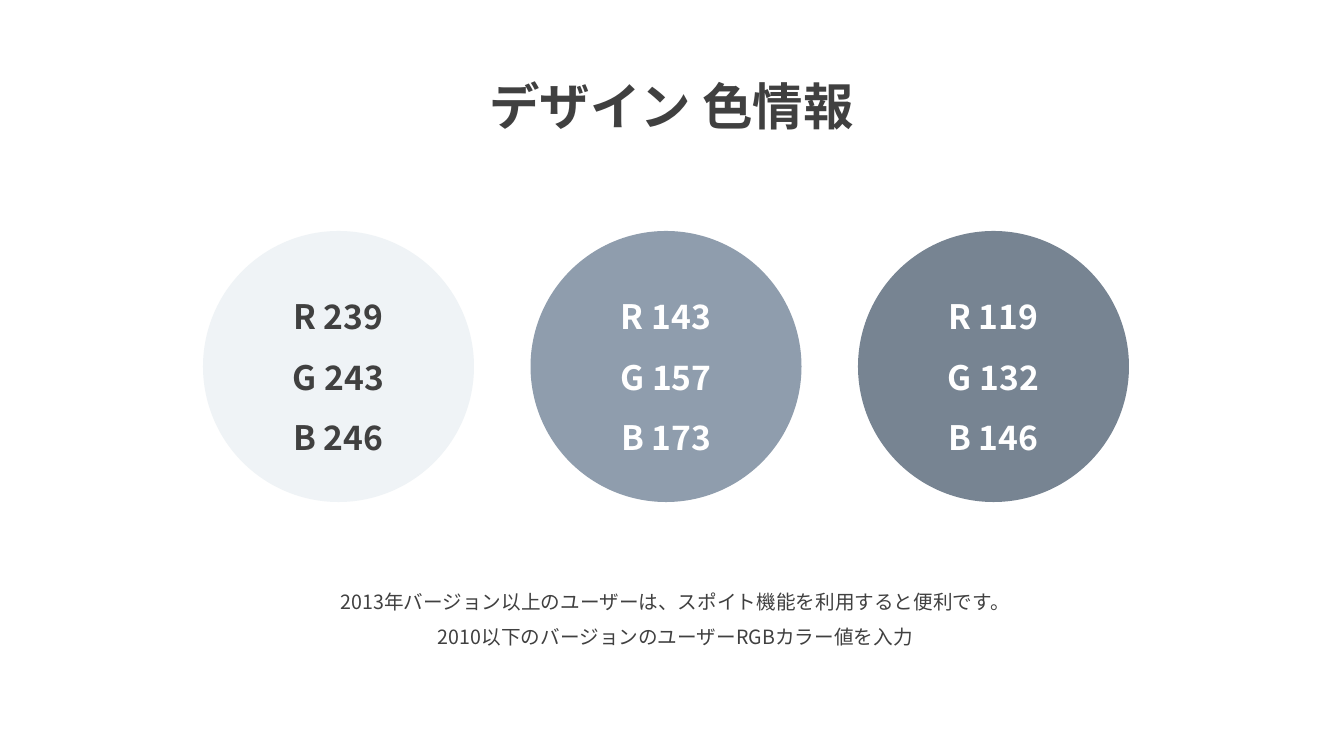
from dataclasses import dataclass

from lxml.etree import SubElement
from pptx import Presentation
from pptx.dml.color import RGBColor
from pptx.enum.shapes import MSO_SHAPE
from pptx.enum.text import MSO_ANCHOR, MSO_AUTO_SIZE, PP_ALIGN
from pptx.oxml.ns import qn
from pptx.util import Pt

EMU_PER_PX = 914400 / 100.8


@dataclass(frozen=True)
class Theme:
    font: str = "Noto Sans CJK KR"
    dark: RGBColor = RGBColor(64, 64, 64)
    light: RGBColor = RGBColor(255, 255, 255)
    title_size: int = 36
    value_size: int = 24
    note_size: int = 14
    line_spacing: float = 1.5
    swatches: tuple = ((239, 243, 246), (143, 157, 173), (119, 132, 146))


THEME = Theme()
TITLE = "デザイン 色情報"
GUIDANCE = (
    "2013年バージョン以上のユーザーは、スポイト機能を利用すると便利です。",
    "2010以下のバージョンのユーザーRGBカラー値を入力",
)


def px(length):
    return round(length * EMU_PER_PX)


def write_text(holder, lines, *, size, color=THEME.dark, bold=False,
               anchor=MSO_ANCHOR.TOP, auto_size=MSO_AUTO_SIZE.NONE):
    frame = holder.text_frame
    frame.word_wrap = True
    frame.auto_size = auto_size
    frame.vertical_anchor = anchor
    for index, line in enumerate(lines):
        paragraph = frame.add_paragraph() if index else frame.paragraphs[0]
        paragraph.alignment = PP_ALIGN.CENTER
        paragraph.line_spacing = THEME.line_spacing
        paragraph.space_before = Pt(0)
        run = paragraph.add_run()
        run.text = line
        run.font.size = Pt(size)
        run.font.bold = bold
        run.font.color.rgb = color
        run.font.name = THEME.font
        SubElement(run.font._element, qn("a:ea")).set("typeface", THEME.font)


def place_title(slide, left, top, width, height):
    title = slide.shapes.title
    title.left, title.top = px(left), px(top)
    title.width, title.height = px(width), px(height)
    write_text(title, [TITLE], size=THEME.title_size, bold=True,
               auto_size=MSO_AUTO_SIZE.SHAPE_TO_FIT_TEXT)


def place_swatches(slide, left, top, width, diameter):
    step = (width - diameter) / (len(THEME.swatches) - 1)
    for index, channels in enumerate(THEME.swatches):
        swatch = slide.shapes.add_shape(
            MSO_SHAPE.OVAL, px(left + index * step), px(top),
            px(diameter), px(diameter))
        swatch.shadow.inherit = False
        swatch.fill.solid()
        swatch.fill.fore_color.rgb = RGBColor(*channels)
        swatch.line.fill.background()
        values = [f"{name} {value}" for name, value in zip("RGB", channels)]
        write_text(swatch, values, size=THEME.value_size, bold=True,
                   color=THEME.dark if min(channels) > 200 else THEME.light,
                   anchor=MSO_ANCHOR.MIDDLE)


def place_guidance(slide, left, top, width, height):
    guidance = slide.shapes.add_textbox(px(left), px(top), px(width), px(height))
    write_text(guidance, GUIDANCE, size=THEME.note_size,
               auto_size=MSO_AUTO_SIZE.SHAPE_TO_FIT_TEXT)


def main():
    deck = Presentation()
    deck.slide_width, deck.slide_height = px(1344), px(756)
    slide = deck.slides.add_slide(deck.slide_layouts.get_by_name("Title Only"))
    place_title(slide, 427, 40, 489, 92)
    place_swatches(slide, 203, 231, 926, 271)
    place_guidance(slide, 254, 573, 843, 78)
    deck.save("out.pptx")


if __name__ == "__main__":
    main()
